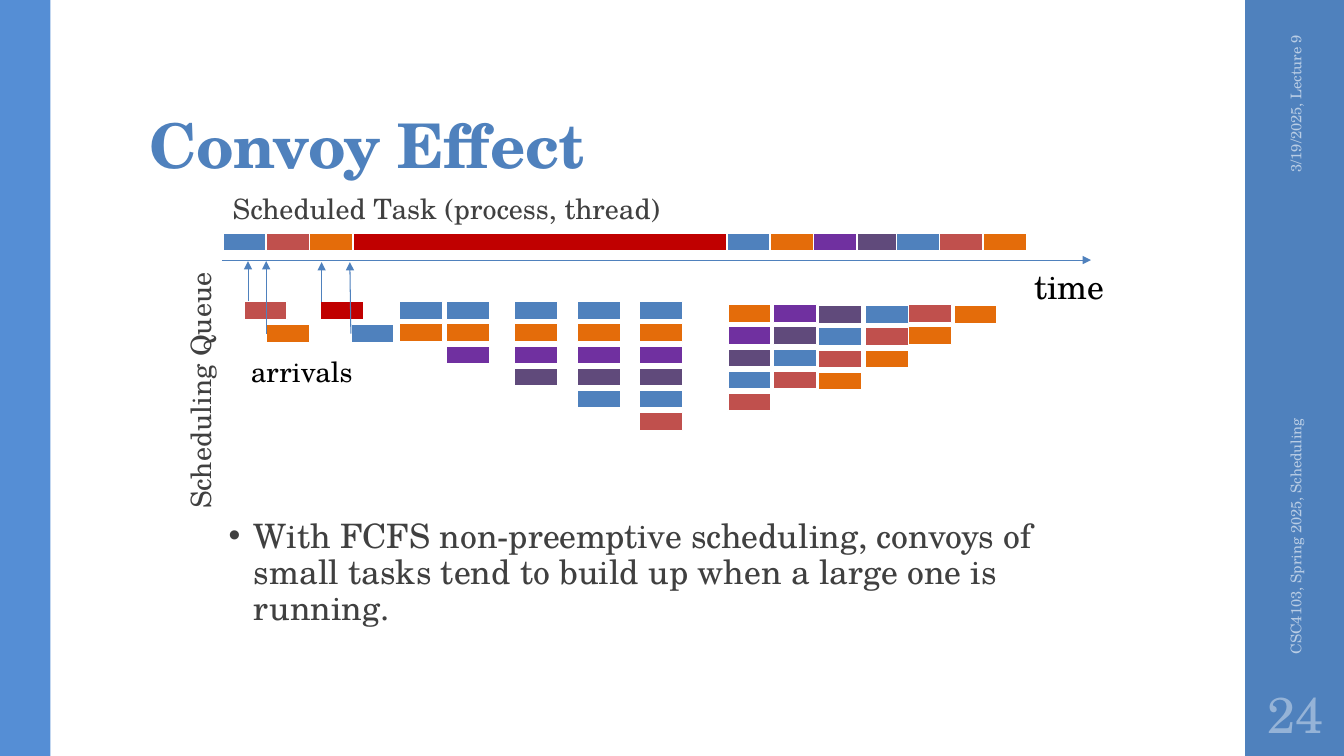
from lxml import etree
from pptx import Presentation
from pptx.dml.color import RGBColor
from pptx.enum.shapes import MSO_CONNECTOR as Connector, MSO_SHAPE as Shape
from pptx.enum.text import MSO_ANCHOR as Anchor, PP_ALIGN as Align
from pptx.oxml.ns import qn
from pptx.util import Inches, Pt

# Content
TITLE = "Convoy Effect"
BULLET = ("With FCFS non-preemptive scheduling, convoys of small tasks "
          "tend to build up when a large one is running.")
TASK_W, TASK_H, QUEUE_PITCH = 0.43, 0.18, 0.22
TIMELINE_LEFT, TIMELINE_TOP = 2.21, 2.31

# Tasks in the order they run: colour, width
TIMELINE = [
    ("blue", TASK_W), ("red", TASK_W), ("orange", TASK_W), ("crimson", 3.71),
    ("blue", TASK_W), ("orange", TASK_W), ("purple", TASK_W), ("plum", 0.39),
    ("blue", TASK_W), ("red", TASK_W), ("orange", TASK_W),
]
# The queue fills in this order, and later empties from the front
WAITING = ["blue", "orange", "purple", "plum", "blue", "red"]
DRAINING = ["orange", "purple", "plum", "blue", "red", "orange"]
# Queue snapshots: left, top, tasks from the front
QUEUES = [(left, 2.99, WAITING[:count]) for left, count in
          [(3.96, 2), (4.43, 3), (5.1, 4), (5.73, 5), (6.34, 6)]]
QUEUES += [
    (7.22, 3.02, DRAINING[:5]),
    (7.67, 3.02, DRAINING[1:5]),
    (8.12, 3.03, DRAINING[2:]),
    (8.58, 3.03, DRAINING[3:]),
    (9.01, 3.02, DRAINING[4:]),
    (9.46, 3.03, DRAINING[5:]),
]
# Arrivals: colour, left, top, arrow start, arrow end, arrow joins left side
ARRIVALS = [
    ("red", 2.42, 2.99, (2.46, 2.99), (2.46, 2.59), False),
    ("orange", 2.64, 3.22, (2.64, 3.31), (2.64, 2.59), True),
    ("crimson", 3.18, 2.99, (3.19, 3.0), (3.19, 2.6), False),
    ("blue", 3.48, 3.22, (3.48, 3.31), (3.47, 2.6), True),
]
# Labels: text, (left, top, width, height), size, colour, options
LABELS = [
    ("3/19/2025, Lecture 9", (11.81, 1.09, 2.08, 0.4), "footer", "pale",
     dict(turn=270, anchor=Anchor.MIDDLE, align=Align.RIGHT)),
    ("CSC4103, Spring 2025, Scheduling", (10.89, 4.43, 3.92, 0.4), "footer",
     "pale", dict(turn=270, anchor=Anchor.MIDDLE)),
    ("24", (12.35, 6.75, 1, 0.65), "number", "mist",
     dict(anchor=Anchor.MIDDLE, align=Align.CENTER)),
    ("time", (10.16, 2.59, 0.91, 0.5), "body", "black", dict(wrap=False)),
    ("Scheduling Queue", (0.71, 3.64, 2.57, 0.44), "label", "text",
     dict(turn=270, wrap=False)),
    ("Scheduled Task (process, thread)", (2.21, 1.85, 4.47, 0.44), "label",
     "text", dict(wrap=False)),
    ("arrivals", (2.39, 3.47, 1.22, 0.44), "label", "black", dict(wrap=False)),
]

THEME = {
    "font": "TeX Gyre Schola",
    "sizes": {"title": 44, "number": 36, "body": 24, "label": 20, "footer": 10.5},
    "colors": {
        "blue": "4F81BD", "sky": "558ED5", "red": "C0504D", "orange": "E46C0A",
        "crimson": "C00000", "purple": "7030A0", "plum": "604A7B",
        "pale": "B9CDE5", "mist": "95B3D7", "text": "404040",
        "black": "000000", "white": "FFFFFF",
    },
}


def color(name):
    return RGBColor.from_string(THEME["colors"][name])


def add_rect(page, left, top, width, height, fill, outlined=True):
    rect = page.shapes.add_shape(Shape.RECTANGLE, Inches(left), Inches(top),
                                 Inches(width), Inches(height))
    rect.shadow.inherit = False
    rect.fill.solid()
    rect.fill.fore_color.rgb = color(fill)
    if outlined:
        rect.line.color.rgb = color("white")
        rect.line.width = Pt(1.1)
    else:
        rect.line.fill.background()
    return rect


def add_task(page, left, top, fill, width=TASK_W):
    return add_rect(page, left, top, width, TASK_H, fill)


def add_arrow(page, start, end):
    arrow = page.shapes.add_connector(
        Connector.STRAIGHT, *[Inches(value) for value in (*start, *end)])
    arrow.line.color.rgb = color("blue")
    arrow.line.width = Pt(0.75)
    etree.SubElement(arrow.line._get_or_add_ln(), qn("a:tailEnd"), type="triangle")
    etree.SubElement(arrow._element.spPr, qn("a:effectLst"))
    return arrow


def add_text(page, text, place, size, ink, turn=0, wrap=True,
             anchor=Anchor.TOP, align=Align.LEFT):
    box = page.shapes.add_textbox(*[Inches(value) for value in place])
    box.rotation = turn
    box.text_frame.word_wrap = wrap
    box.text_frame.vertical_anchor = anchor
    para = box.text_frame.paragraphs[0]
    para.alignment = align
    span = para.add_run()
    span.text = text
    span.font.name = THEME["font"]
    span.font.size = Pt(THEME["sizes"][size])
    span.font.color.rgb = color(ink)
    return box, para, span


def main():
    deck = Presentation()
    deck.slide_width, deck.slide_height = Inches(13.33), Inches(7.5)
    page = deck.slides.add_slide(deck.slide_layouts[6])

    # Side bands
    add_rect(page, 12.35, 0, 0.98, 7.5, "blue", outlined=False)
    add_rect(page, 0, 0, 0.5, 7.5, "sky", outlined=False)

    # Title
    box, para, span = add_text(page, TITLE, (1.38, 0.32, 10.6, 1.53), "title",
                               "blue", anchor=Anchor.BOTTOM)
    box.text_frame.margin_top = Inches(0.03)
    para.line_spacing = 0.9
    span.font.bold = True
    span.font._element.set("spc", "-50")

    # Bullet
    box, para, span = add_text(page, BULLET, (2.17, 5.1, 8.62, 1.77), "body", "text")
    para.line_spacing = 0.9
    props = para._p.get_or_add_pPr()
    props.set("marL", str(Inches(0.25)))
    props.set("indent", str(Inches(-0.25)))
    etree.SubElement(props, qn("a:buFont"), typeface="Arial")
    etree.SubElement(props, qn("a:buChar"), char="•")

    # Time axis and the tasks that ran
    add_arrow(page, (2.2, 2.58), (10.82, 2.58))
    left = TIMELINE_LEFT
    for fill, width in TIMELINE:
        add_task(page, left, TIMELINE_TOP, fill, width)
        left += width

    # Queue snapshots
    for left, top, tasks in QUEUES:
        for row, fill in enumerate(tasks):
            add_task(page, left, top + row * QUEUE_PITCH, fill)

    # Arrivals
    for fill, left, top, start, end, joined in ARRIVALS:
        task = add_task(page, left, top, fill)
        arrow = add_arrow(page, start, end)
        if joined:
            arrow.begin_connect(task, 1)

    # Labels
    for text, place, size, ink, options in LABELS:
        add_text(page, text, place, size, ink, **options)

    deck.save("out.pptx")


if __name__ == "__main__":
    main()
